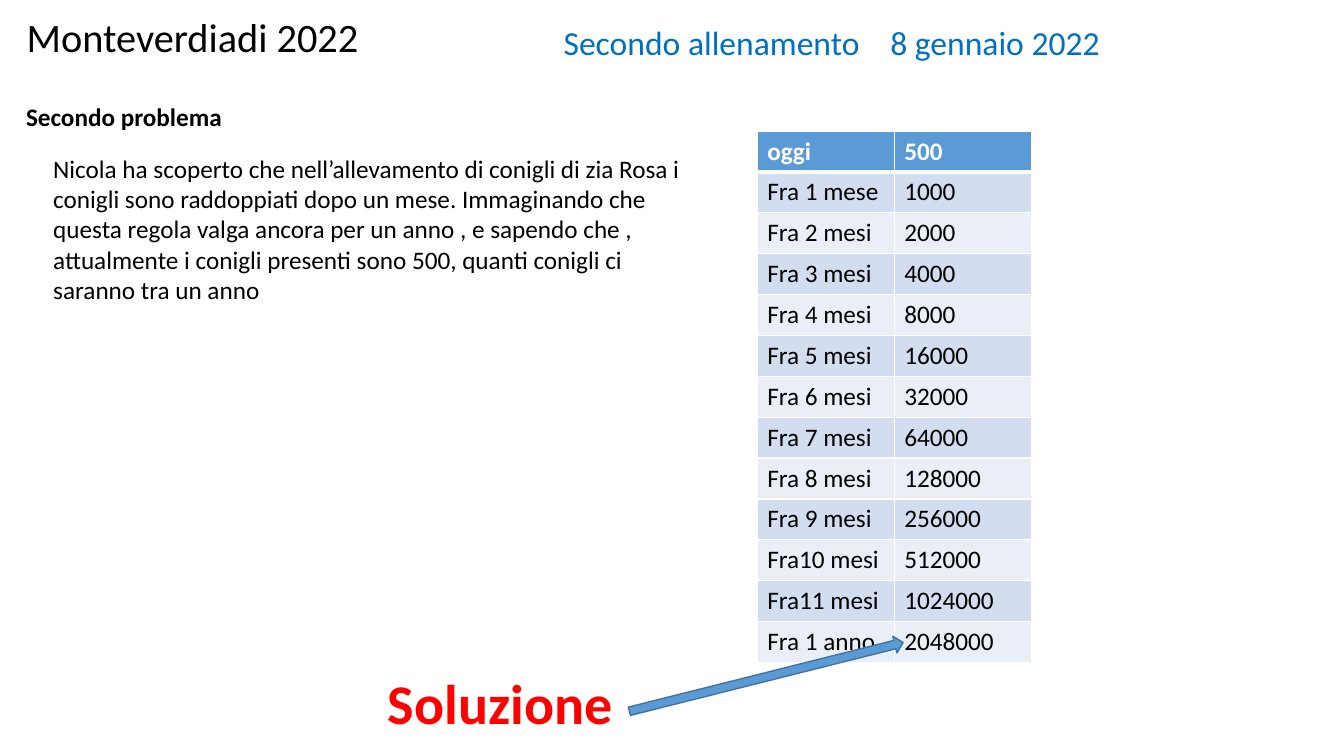
from lxml.etree import SubElement
from pptx import Presentation
from pptx.dml.color import RGBColor
from pptx.enum.shapes import MSO_SHAPE
from pptx.enum.text import MSO_ANCHOR, MSO_AUTO_SIZE, PP_ALIGN
from pptx.oxml.ns import qn
from pptx.util import Inches, Pt

COLORS = {
    "black": "000000", "white": "FFFFFF", "blue": "0070C0", "red": "FF0000",
    "header": "5B9BD5", "odd": "D2DEEF", "even": "EAEFF7", "outline": "43739E",
}
FONT = "Calibri"


def rgb(name):
    return RGBColor.from_string(COLORS[name])


class SlideBuilder:
    def __init__(self, prs):
        self.font = FONT
        self.slide = prs.slides.add_slide(prs.slide_layouts[5])

    def run(self, p, text, size=18, color="black", bold=False):
        r = p.add_run()
        r.text = text
        r.font.name = self.font
        r.font.size = Pt(size)
        r.font.bold = bold
        r.font.color.rgb = rgb(color)

    def fill_text(self, sp, text, size, color, bold, align, anchor, spacing):
        tf = sp.text_frame
        tf.word_wrap = True
        tf.auto_size = MSO_AUTO_SIZE.NONE
        tf.vertical_anchor = anchor
        p = tf.paragraphs[0]
        p.alignment = align
        p.line_spacing = spacing
        self.run(p, text, size, color, bold)

    def title(self, box, text, size):
        sp = self.slide.shapes.title
        sp.left, sp.top, sp.width, sp.height = map(Inches, box)
        self.fill_text(sp, text, size, "black", False,
                       PP_ALIGN.CENTER, MSO_ANCHOR.BOTTOM, 0.9)

    def text(self, box, text, size=18, color="black", bold=False,
             align=PP_ALIGN.LEFT, anchor=MSO_ANCHOR.TOP, spacing=1.0):
        sp = self.slide.shapes.add_textbox(*map(Inches, box))
        self.fill_text(sp, text, size, color, bold, align, anchor, spacing)
        return sp

    def tab_stop(self, sp, margin, pos):
        tf = sp.text_frame
        tf.margin_left = Inches(margin)
        pPr = tf.paragraphs[0]._p.get_or_add_pPr()
        tabs = SubElement(pPr, qn("a:tabLst"))
        SubElement(tabs, qn("a:tab"), pos=str(Inches(pos)), algn="l")

    def borders(self, cell, bottom):
        tcPr = cell._tc.get_or_add_tcPr()
        widths = {"a:lnL": 1, "a:lnR": 1, "a:lnT": 1, "a:lnB": bottom}
        for i, (tag, width) in enumerate(widths.items()):
            ln = tcPr.makeelement(qn(tag), {"w": str(Pt(width))})
            fill = SubElement(ln, qn("a:solidFill"))
            SubElement(fill, qn("a:srgbClr"), val=COLORS["white"])
            tcPr.insert(i, ln)

    def table(self, box, rows):
        shape = self.slide.shapes.add_table(
            len(rows), len(rows[0]), *map(Inches, box))
        for i, values in enumerate(rows):
            head = i == 0
            fill = "header" if head else "odd" if i % 2 else "even"
            for j, value in enumerate(values):
                cell = shape.table.cell(i, j)
                cell.fill.solid()
                cell.fill.fore_color.rgb = rgb(fill)
                self.run(cell.text_frame.paragraphs[0], value,
                         color="white" if head else "black", bold=head)
                self.borders(cell, 3 if head else 1)

    def arrow(self, box, rotation):
        sp = self.slide.shapes.add_shape(MSO_SHAPE.RIGHT_ARROW, *map(Inches, box))
        sp.rotation = rotation
        sp.shadow.inherit = False
        sp.fill.solid()
        sp.fill.fore_color.rgb = rgb("header")
        sp.line.color.rgb = rgb("outline")
        sp.line.width = Pt(1)


def main():
    prs = Presentation()
    prs.slide_width, prs.slide_height = Inches(13.33), Inches(7.5)
    s = SlideBuilder(prs)

    # Heading: title and date of the training
    s.title((-0.11, 0.21, 4.04, 0.45), "Monteverdiadi 2022", 28.8)
    subtitle = s.text((4.96, 0.21, 6.58, 0.66),
                      "Secondo allenamento\t8 gennaio 2022",
                      24, "blue", spacing=0.9)
    s.tab_stop(subtitle, 0.63, 3.24)

    # Problem statement
    s.text((0.16, 0.96, 6.67, 1.01), "Secondo problema", bold=True)
    s.text((0.43, 1.47, 6.67, 1.62),
           "Nicola ha scoperto che nell’allevamento di conigli di zia Rosa i "
           "conigli sono raddoppiati dopo un mese. Immaginando che questa "
           "regola valga ancora per un anno , e sapendo che , attualmente i "
           "conigli presenti sono 500, quanti conigli ci saranno tra un anno")

    # Rabbits double every month
    labels = ["oggi", "Fra 1 mese"]
    labels += [f"Fra {month} mesi" for month in range(2, 10)]
    labels += ["Fra10 mesi", "Fra11 mesi", "Fra 1 anno"]
    rows = [(label, str(500 * 2 ** month)) for month, label in enumerate(labels)]
    s.table((7.51, 1.3, 2.72, 5.2), rows)

    # Solution
    s.text((2.94, 6.91, 4.04, 0.45), "Soluzione", 40, "red", True,
           PP_ALIGN.CENTER, MSO_ANCHOR.BOTTOM, 0.9)
    s.arrow((6.2, 6.63, 2.8, 0.17), 345.9)

    prs.save("out.pptx")


if __name__ == "__main__":
    main()
